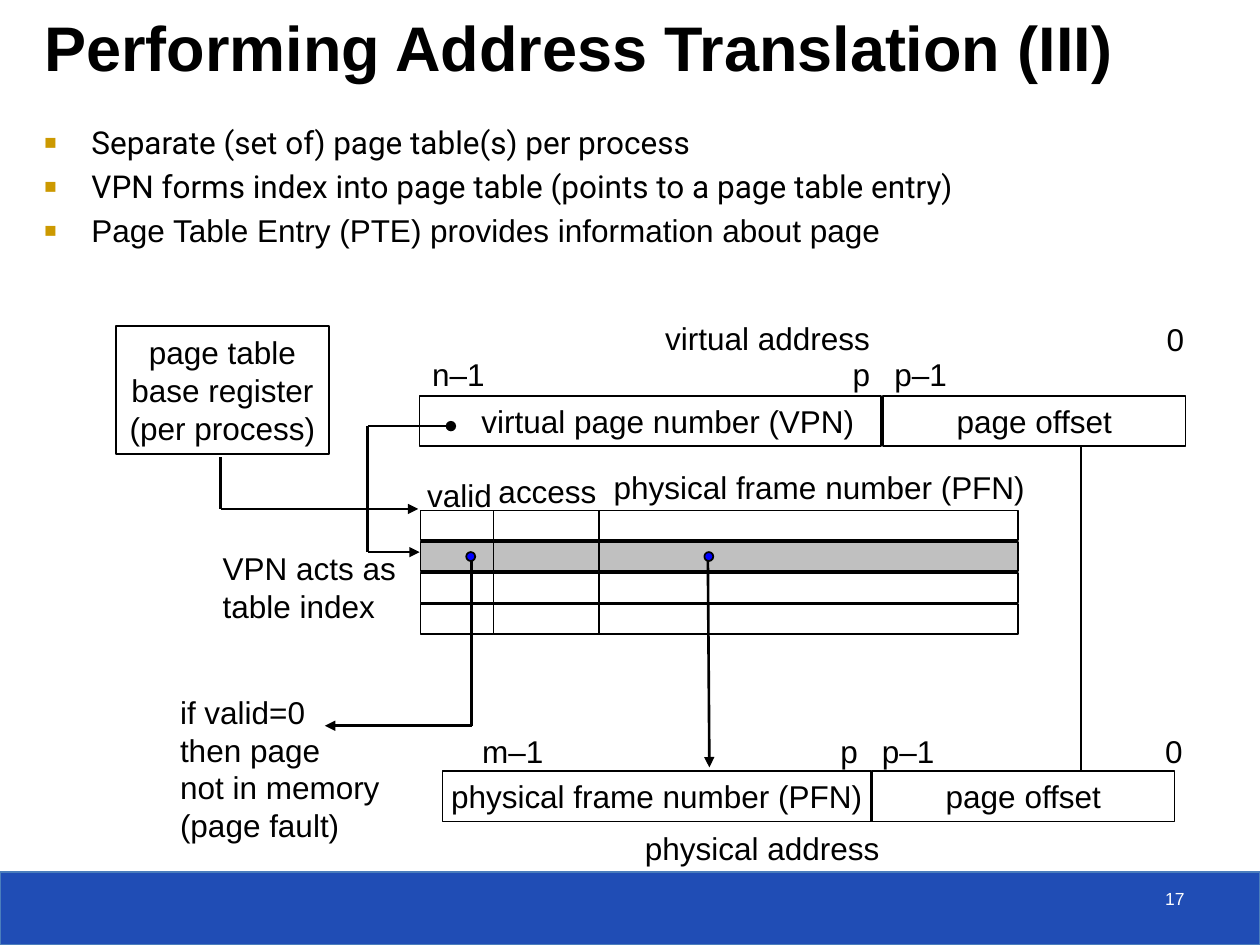
from lxml.etree import SubElement
from pptx import Presentation
from pptx.dml.color import RGBColor
from pptx.enum.shapes import MSO_CONNECTOR, MSO_SHAPE
from pptx.enum.text import MSO_ANCHOR, MSO_AUTO_SIZE, PP_ALIGN
from pptx.oxml.ns import qn
from pptx.util import Cm, Pt

# Content, lengths in cm
TITLE = "Performing Address Translation (III)"
BULLETS = [
    ("Separate (set of) page table(s) per process", "Roboto"),
    ("VPN forms index into page table (points to a page table entry)", "Roboto"),
    ("Page Table Entry (PTE) provides information about page", "Arial"),
]
BOXES = [  # text, left, top, width, height, left inset
    ("virtual page number (VPN)", 8.46, 7.98, 9.3, 1.02, 0.96),
    ("page offset", 17.8, 7.98, 6.1, 1.02, 0.25),
    ("physical frame number (PFN)", 8.92, 15.54, 8.64, 1.02, 0.25),
    ("page offset", 17.58, 15.54, 6.1, 1.02, 0.25),
    ("page table\nbase register\n(per process)", 2.34, 6.58, 4.29, 2.57, 0.25),
]
LABELS = [  # text, left, top, width, height
    ("virtual address", 13.16, 6.3, 5.03, 1.02),
    ("n–1", 8.46, 7.04, 2, 1.02),
    ("p", 16.94, 7.04, 0.9, 1.02),
    ("p–1", 17.78, 7.04, 2, 1.02),
    ("0", 23.27, 6.32, 0.9, 1.02),
    ("valid", 8.36, 9.47, 2.2, 1.02),
    ("access", 9.8, 9.4, 2.8, 1.02),
    ("physical frame number (PFN)", 12.12, 9.32, 8.89, 1.02),
    ("VPN acts as\ntable index", 4.24, 10.95, 4.2, 1.78),
    ("if valid=0\nthen page\nnot in memory\v(page fault)", 3.38, 13.84, 4.8, 3.33),
    ("m–1", 9.47, 14.63, 2.2, 1.02),
    ("p", 16.69, 14.63, 0.9, 1.02),
    ("p–1", 17.53, 14.63, 2, 1.02),
    ("0", 23.24, 14.63, 0.9, 1.02),
    ("physical address", 12.75, 16.59, 5.66, 1.02),
]
TABLE_LEFT, TABLE_TOP, ROW_PITCH, ROW_HEIGHT = 8.48, 10.29, 0.63, 0.6
COLUMN_WIDTHS = [1.47, 2.12, 8.46]
ROW_FILLS = ["FFFFFF", "C0C0C0", "FFFFFF", "FFFFFF"]
DOT_LEFTS, DOT_TOP, DOT_SIZE = [9.4, 14.2], 11.13, 0.18
ROUTES = [  # points, end mark
    ([(4.45, 9.22), (4.45, 10.26), (8.43, 10.26)], "triangle"),
    ([(7.41, 11.13), (7.41, 8.59), (9.09, 8.59)], "oval"),
    ([(7.41, 11.13), (8.46, 11.13)], "triangle"),
    ([(9.51, 11.3), (9.51, 14.63), (6.55, 14.63)], "triangle"),
    ([(14.27, 11.3), (14.3, 15.47)], "triangle"),
    ([(21.79, 15.52), (21.79, 8.99)], None),
]

prs = Presentation()
prs.slide_width, prs.slide_height = Cm(25.4), Cm(19.05)
s = prs.slides.add_slide(prs.slide_layouts[1])


def color(hex_code):
    return RGBColor.from_string(hex_code)


def style(p, size=18, font="Arial", hex_code="000000", align=PP_ALIGN.LEFT, bold=False):
    p.alignment = align
    for r in p.runs:
        r.font.size, r.font.name, r.font.bold = Pt(size), font, bold
        r.font.color.rgb = color(hex_code)


def place(sp, left, top, width, height):
    sp.left, sp.top, sp.width, sp.height = Cm(left), Cm(top), Cm(width), Cm(height)


def add_shape(kind, left, top, width, height, fill, line="000000", weight=1):
    sp = s.shapes.add_shape(kind, Cm(left), Cm(top), Cm(width), Cm(height))
    sp.shadow.inherit = False
    sp.fill.solid()
    sp.fill.fore_color.rgb = color(fill)
    sp.line.color.rgb = color(line)
    sp.line.width = Pt(weight)
    return sp


def add_label(text, left, top, width, height, **look):
    tf = s.shapes.add_textbox(Cm(left), Cm(top), Cm(width), Cm(height)).text_frame
    tf.text = text
    tf.word_wrap = True
    for p in tf.paragraphs:
        style(p, **look)


def add_line(start, end, mark=None):
    cx = s.shapes.add_connector(MSO_CONNECTOR.STRAIGHT, *map(Cm, start + end))
    cx.line.color.rgb = color("000000")
    cx.line.width = Pt(1.5)
    spPr = cx._element.spPr
    if mark:
        SubElement(spPr.find(qn("a:ln")), qn("a:tailEnd"), type=mark)
    SubElement(spPr, qn("a:effectLst"))


# Footer band and page number
add_shape(MSO_SHAPE.RECTANGLE, 0, 17.58, 25.4, 1.47, "204DB5", "4B7EBC", 0.75)
add_label("17", 18.21, 17.78, 5.92, 0.84, size=10, hex_code="FFFFFF",
          align=PP_ALIGN.RIGHT)

# Title
title = s.shapes.title
place(title, 0.64, 0.2, 23.93, 1.63)
tf = title.text_frame
tf.text = TITLE
tf.auto_size = MSO_AUTO_SIZE.NONE
tf.vertical_anchor = MSO_ANCHOR.BOTTOM
style(tf.paragraphs[0], size=36, bold=True)

# Bullet list
body = s.placeholders[1]
place(body, 0.64, 2.36, 24.33, 5.08)
tf = body.text_frame
tf.text = "\n".join(text for text, _ in BULLETS)
tf.auto_size = MSO_AUTO_SIZE.NONE
for i, (p, (_, font)) in enumerate(zip(tf.paragraphs, BULLETS)):
    pPr = p._p.get_or_add_pPr()
    pPr.set("marL", str(Cm(0.95)))
    pPr.set("indent", str(Cm(-0.95)))
    SubElement(SubElement(pPr, qn("a:buClr")), qn("a:srgbClr"), val="CC9900")
    SubElement(pPr, qn("a:buSzPct"), val="65000")
    SubElement(pPr, qn("a:buFont"), typeface="Arial")
    SubElement(pPr, qn("a:buChar"), char="■")
    p.space_before = Pt(3.5 if i else 0)
    style(p, font=font)

# Address fields and base register
for text, left, top, width, height, inset in BOXES:
    tf = add_shape(MSO_SHAPE.RECTANGLE, left, top, width, height, "FFFFFF").text_frame
    tf.text = text
    tf.word_wrap = False
    tf.margin_left = Cm(inset)
    tf.vertical_anchor = MSO_ANCHOR.MIDDLE
    for p in tf.paragraphs:
        style(p, align=PP_ALIGN.CENTER)

# Page table entries
for row, fill in enumerate(ROW_FILLS):
    for col, width in enumerate(COLUMN_WIDTHS):
        add_shape(MSO_SHAPE.RECTANGLE, TABLE_LEFT + sum(COLUMN_WIDTHS[:col]),
                  TABLE_TOP + row * ROW_PITCH, width, ROW_HEIGHT, fill)
for left in DOT_LEFTS:
    add_shape(MSO_SHAPE.OVAL, left, DOT_TOP, DOT_SIZE, DOT_SIZE, "0000FF")

# Labels
for label in LABELS:
    add_label(*label)

# Lines and arrows
for points, mark in ROUTES:
    for start, end in zip(points, points[1:]):
        add_line(start, end, mark if end == points[-1] else None)

prs.save("out.pptx")
